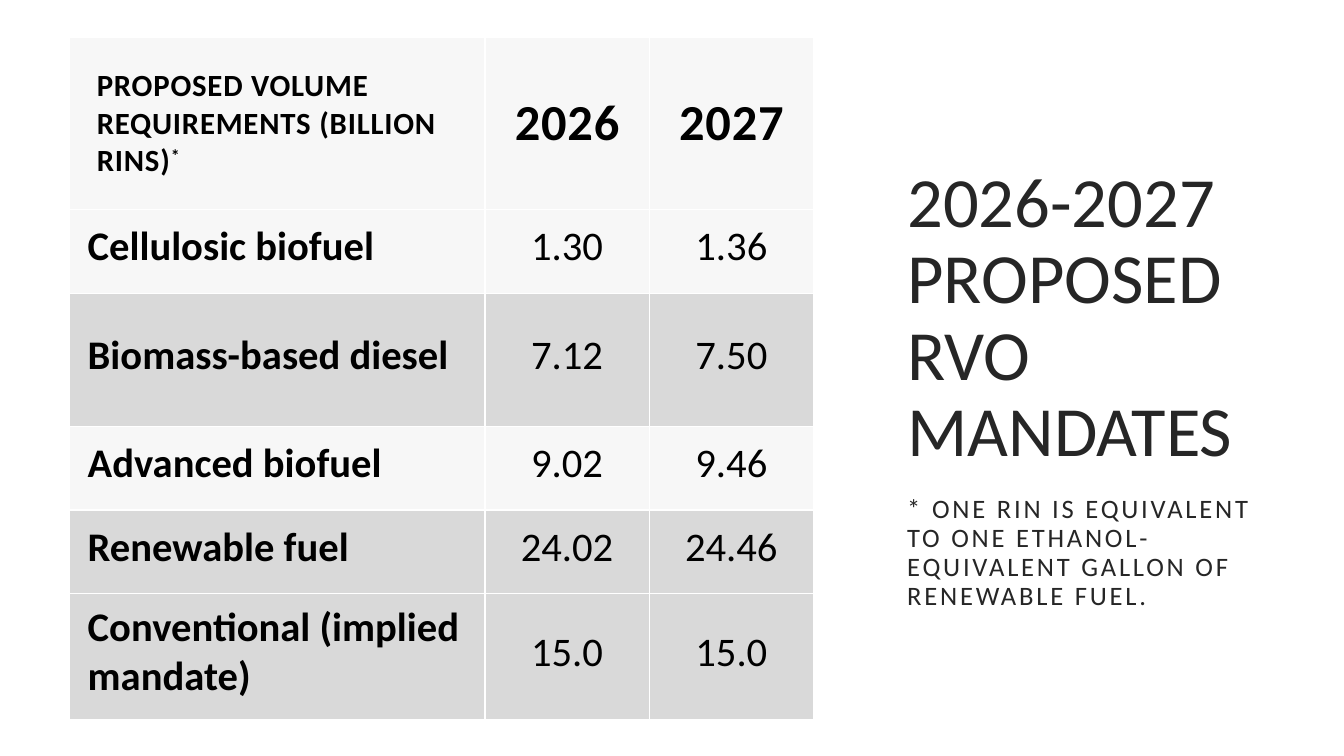
from pptx import Presentation
from pptx.dml.color import RGBColor
from pptx.enum.text import MSO_ANCHOR as Anchor, MSO_AUTO_SIZE as AutoSize, PP_ALIGN as Align
from pptx.util import Inches, Pt

BLACK, INK = "000000", "262626"
LIGHT, GRAY = "F7F7F7", "D9D9D9"


def rgb(value):
    return RGBColor.from_string(value)


def add_text(paragraph, text, size, color, bold=False, **run_attributes):
    """Add a Calibri run; run_attributes are spc (1/100 pt) and baseline (1/1000 %)."""
    run = paragraph.add_run()
    run.text = text
    formats = {"name": "Calibri", "size": Pt(size), "bold": bold}
    for name, value in formats.items():
        setattr(run.font, name, value)
    run.font.color.rgb = rgb(color)
    for name, value in run_attributes.items():
        run._r.get_or_add_rPr().set(name, str(value))


prs = Presentation()
prs.slide_width, prs.slide_height = Inches(13.33), Inches(7.5)
slide = prs.slides.add_slide(prs.slide_layouts[5])

# Title
title = slide.shapes.title
title_place = {"left": 8.9, "top": 0.7, "width": 3.72, "height": 4.03}
for name, value in title_place.items():
    setattr(title, name, Inches(value))
title_frame = title.text_frame
title_format = {"word_wrap": True, "auto_size": AutoSize.NONE,
                "vertical_anchor": Anchor.BOTTOM}
for name, value in title_format.items():
    setattr(title_frame, name, value)
heading = title_frame.paragraphs[0]
heading.alignment = Align.LEFT
heading.line_spacing = 0.9
add_text(heading, "2026-2027 PROPOSED RVO MANDATES", 50.4, INK)

# Volume table
header = ("PROPOSED VOLUME REQUIREMENTS (BILLION RINS)", "2026", "2027")
volumes = [
    (1.71, LIGHT, header),
    (0.83, LIGHT, ("Cellulosic biofuel", "1.30", "1.36")),
    (1.32, GRAY, ("Biomass-based diesel", "7.12", "7.50")),
    (0.83, LIGHT, ("Advanced biofuel", "9.02", "9.46")),
    (0.83, GRAY, ("Renewable fuel", "24.02", "24.46")),
    (1.25, GRAY, ("Conventional (implied mandate)", "15.0", "15.0")),
]
table = slide.shapes.add_table(len(volumes), len(header), Inches(0.69), Inches(0.37),
                               Inches(7.37), Inches(6.77)).table
for column, width in zip(table.columns, (4.12, 1.63, 1.63)):
    column.width = Inches(width)

for r, (height, fill, entries) in enumerate(volumes):
    table.rows[r].height = Inches(height)
    is_header = r == 0
    side, top = (0.27, 0.27) if is_header else (0.18, 0.09)
    cell_format = {"margin_left": Inches(side), "margin_right": Inches(side),
                   "margin_top": Inches(top), "margin_bottom": Inches(side),
                   "vertical_anchor": Anchor.MIDDLE}
    for c, entry in enumerate(entries):
        cell = table.cell(r, c)
        for name, value in cell_format.items():
            setattr(cell, name, value)
        cell.fill.solid()
        cell.fill.fore_color.rgb = rgb(fill)
        line = cell.text_frame.paragraphs[0]
        line.alignment = Align.CENTER if c else Align.LEFT
        if is_header:
            size = 36 if c else 22
            add_text(line, entry, size, BLACK, True, spc=60)
            if c == 0:
                add_text(line, "*", size, BLACK, True, spc=60, baseline=30000)
        else:
            add_text(line, entry, 29, BLACK, c == 0)

# Footnote
footnote = slide.shapes.add_textbox(Inches(8.9), Inches(4.87), Inches(3.74), Inches(1.35))
footnote.text_frame.word_wrap = True
note = footnote.text_frame.paragraphs[0]
note.line_spacing = 0.9
note.space_after = Pt(2)
add_text(note, "* ONE RIN IS EQUIVALENT TO ONE ETHANOL-EQUIVALENT GALLON OF RENEWABLE FUEL.",
         19, INK, spc=200)

prs.save("out.pptx")
